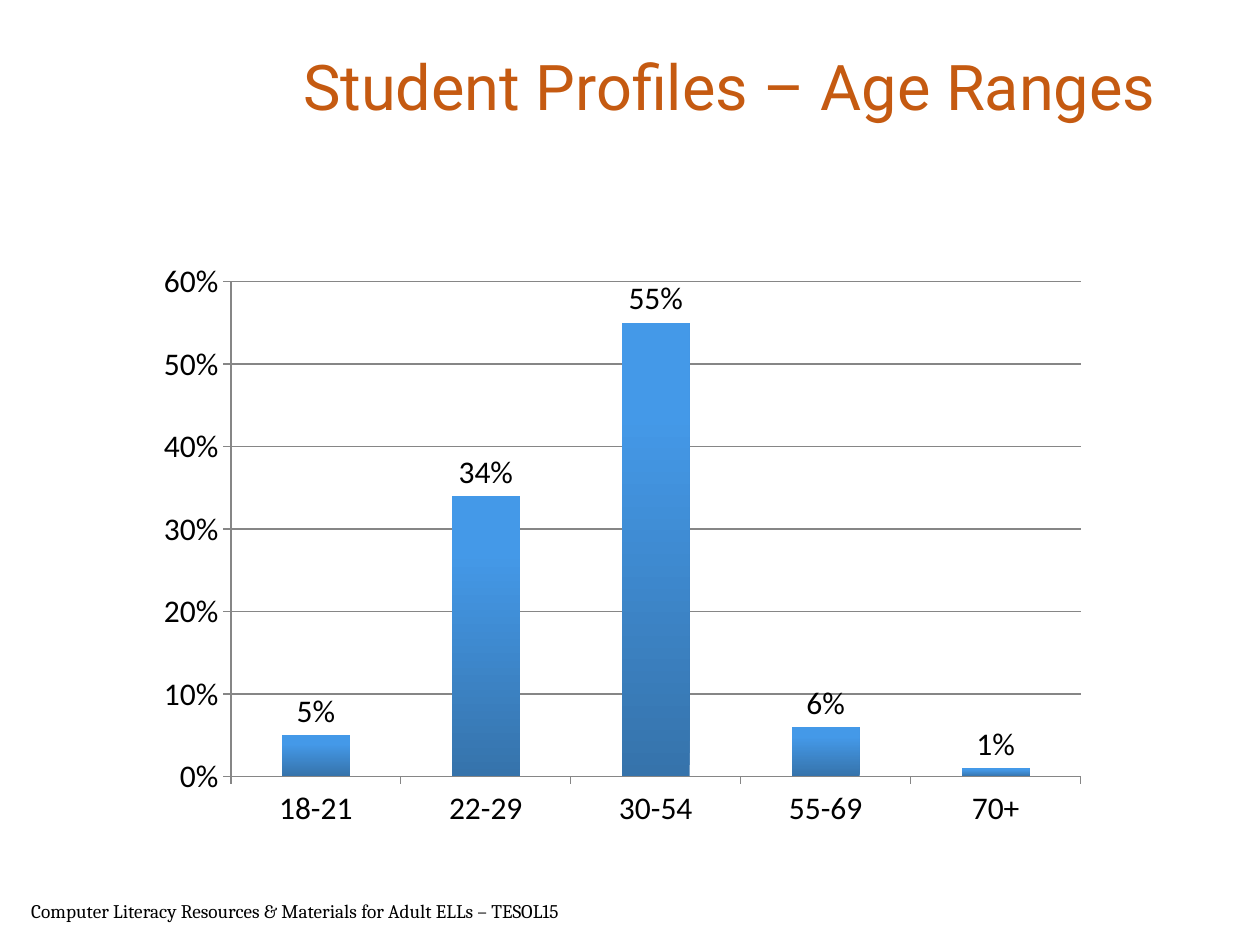
from pptx import Presentation
from pptx.chart.data import CategoryChartData
from pptx.dml.color import RGBColor
from pptx.enum.chart import XL_CHART_TYPE as ChartType, XL_LABEL_POSITION as LabelPos
from pptx.enum.chart import XL_TICK_MARK as Tick
from pptx.enum.text import MSO_ANCHOR as Anchor, PP_ALIGN as Align
from pptx.util import Cm, Pt

COLORS = {
    "title": "C55A11",
    "text": "000000",
    "line": "868686",
    "bar_top": "4499E8",
    "bar_bottom": "3673AB",
}


def color(name):
    return RGBColor.from_string(COLORS[name])


def add_text(text, left, top, width, height, font, size, fill,
             align=Align.LEFT, anchor=Anchor.TOP):
    frame = slide.shapes.add_textbox(Cm(left), Cm(top), Cm(width), Cm(height)).text_frame
    frame.word_wrap = True
    frame.vertical_anchor = anchor
    paragraph = frame.paragraphs[0]
    paragraph.alignment = align
    run = paragraph.add_run()
    run.text = text
    run.font.name = font
    run.font.size = Pt(size)
    run.font.color.rgb = color(fill)


prs = Presentation()
prs.slide_width, prs.slide_height = Cm(25.4), Cm(19.05)
slide = prs.slides.add_slide(prs.slide_layouts[6])

# Title
add_text("Student Profiles – Age Ranges", 5.28, 0.13, 18.85, 3.18,
         font="Roboto", size=36, fill="title", align=Align.CENTER, anchor=Anchor.MIDDLE)

# Age range chart
age_data = CategoryChartData(number_format="0%")
age_data.categories = ["18-21", "22-29", "30-54", "55-69", "70+"]
age_data.add_series("Series 1", [0.05, 0.34, 0.55, 0.06, 0.01])
ages = slide.shapes.add_chart(ChartType.COLUMN_CLUSTERED, Cm(2.92), Cm(5.05),
                              Cm(19.25), Cm(11.86), age_data).chart
ages.has_legend = False
ages.has_title = False
ages.font.name = "Calibri"
ages.font.size = Pt(18)
ages.font.color.rgb = color("text")

# Axes and gridlines
shares = ages.value_axis
shares.minimum_scale, shares.maximum_scale, shares.major_unit = 0, 0.6, 0.1
shares.tick_labels.number_format = "0%"
shares.tick_labels.number_format_is_linked = False
shares.has_major_gridlines = True
for axis in (ages.category_axis, shares):
    axis.major_tick_mark = Tick.OUTSIDE
    axis.minor_tick_mark = Tick.NONE
    axis.tick_labels.font.size = Pt(18)
for line in (ages.category_axis.format.line, shares.format.line,
             shares.major_gridlines.format.line):
    line.color.rgb = color("line")
    line.width = Pt(0.75)

# Bars, dark at the foot and light at the top
bars = ages.plots[0]
bars.gap_width = 150
bars.vary_by_categories = False
bar_fill = bars.series[0].format.fill
bar_fill.gradient()
bar_fill.gradient_angle = 90
for stop, name, position in zip(bar_fill.gradient_stops, ("bar_bottom", "bar_top"), (0, 0.8)):
    stop.color.rgb = color(name)
    stop.position = position

# Percentages above the bars
bars.has_data_labels = True
percents = bars.data_labels
percents.show_value = True
percents.number_format = "0%"
percents.number_format_is_linked = False
percents.position = LabelPos.OUTSIDE_END
percents.font.size = Pt(18)
percents.font.color.rgb = color("text")

# Footer
add_text("Computer Literacy Resources & Materials for Adult ELLs – TESOL15",
         0.38, 18.01, 11.94, 1.02, font="Cambria", size=11, fill="text")

prs.save("out.pptx")
